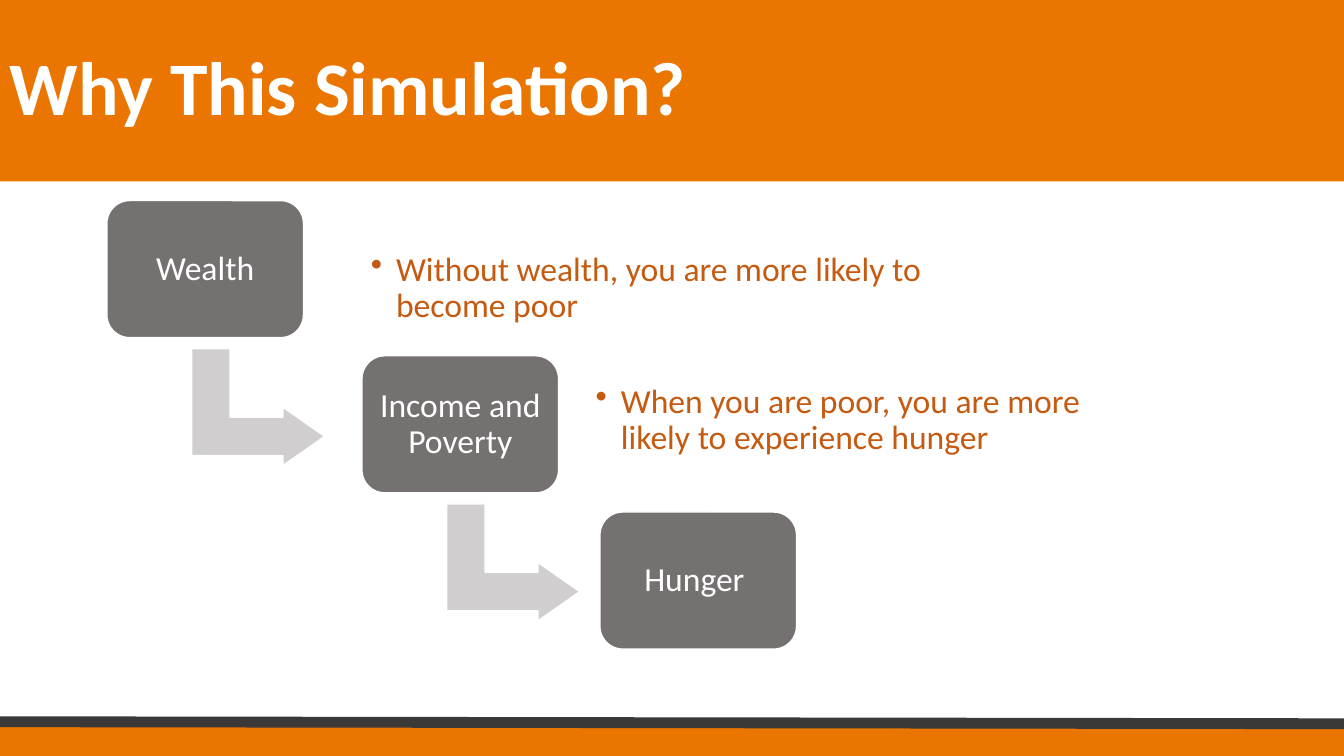
from dataclasses import dataclass

from lxml.etree import SubElement
from pptx import Presentation
from pptx.dml.color import RGBColor as RGB
from pptx.enum.shapes import MSO_CONNECTOR as CONNECTOR, MSO_SHAPE as SHAPE
from pptx.enum.text import MSO_ANCHOR as ANCHOR, PP_ALIGN as ALIGN
from pptx.oxml.ns import qn
from pptx.util import Inches, Pt


@dataclass(frozen=True)
class Theme:
    font: str = "Calibri"
    orange: str = "EA7500"
    charcoal: str = "3B3838"
    gray: str = "767171"
    light_gray: str = "D0CECE"
    rust: str = "C55A11"
    white: str = "FFFFFF"
    title_size: int = 54
    body_size: int = 24
    outline: float = 1
    rule: float = 7.75


THEME = Theme()
SLIDE_W, SLIDE_H = 13.33, 7.5

# Each step: left and top within the flow, label, detail (left, top, width within the step, text)
STEPS = [
    (0, 0, "Wealth",
     (2.52, 0.32, 5.91, "Without wealth, you are more likely to become poor")),
    (2.53, 1.54, "Income and Poverty",
     (2.22, 0.09, 5.05, "When you are poor, you are more likely to experience hunger")),
    (4.89, 3.09, "Hunger ", None),
]


def write(shape, text, size=THEME.body_size, color=THEME.white, bold=False,
          align=ALIGN.LEFT, inset=0.1, inset_y=0.1, bullet=False):
    """Set a shape's text, vertically centred."""
    frame = shape.text_frame
    frame.word_wrap = True
    frame.vertical_anchor = ANCHOR.MIDDLE
    frame.margin_left = frame.margin_right = Inches(inset)
    frame.margin_top = frame.margin_bottom = Inches(inset_y)
    line = frame.paragraphs[0]
    if bullet:
        props = line._p.get_or_add_pPr()
        props.set("marL", str(Inches(0.25)))
        props.set("indent", str(Inches(-0.25)))
        SubElement(props, qn("a:buChar"), char="•")
    line.alignment = align
    line.line_spacing = 0.9
    run = line.add_run()
    run.text = text
    run.font.name = THEME.font
    run.font.size = Pt(size)
    run.font.bold = bold
    run.font.color.rgb = RGB.from_string(color)


def add_block(slide, kind, left, top, width, height, fill, outlined=False, adjust=()):
    block = slide.shapes.add_shape(
        kind, Inches(left), Inches(top), Inches(width), Inches(height))
    block.shadow.inherit = False
    block.fill.solid()
    block.fill.fore_color.rgb = RGB.from_string(fill)
    if outlined:
        block.line.color.rgb = RGB.from_string(THEME.white)
        block.line.width = Pt(THEME.outline)
    else:
        block.line.fill.background()
    for index, value in enumerate(adjust):
        block.adjustments[index] = value
    return block


def add_footer(slide, left, top, width, height):
    add_block(slide, SHAPE.RECTANGLE, left, top, width, height, THEME.orange)
    rule = slide.shapes.add_connector(
        CONNECTOR.STRAIGHT, Inches(left), Inches(top - 0.02), Inches(left + width), Inches(top))
    rule.line.color.rgb = RGB.from_string(THEME.charcoal)
    rule.line.width = Pt(THEME.rule)
    SubElement(rule._element.spPr, qn("a:effectLst"))


def add_title(slide, left, top, width, height, text):
    banner = add_block(slide, SHAPE.RECTANGLE, left, top, width, height, THEME.orange)
    write(banner, text, size=THEME.title_size, bold=True, inset_y=0.05)


def add_flow(slide, left, top, box_w, box_h):
    for step_left, step_top, label, detail in STEPS:
        x, y = left + step_left, top + step_top
        # Arrow down to the next step
        if detail:
            arrow = add_block(slide, SHAPE.BENT_UP_ARROW, x + 0.92, y + 1.39, 1.16, 1.32,
                              THEME.light_gray, outlined=True, adjust=(0.328, 0.25, 0.358))
            arrow.rotation = 90
        # Step box
        step = add_block(slide, SHAPE.ROUNDED_RECTANGLE, x, y, box_w, box_h,
                         THEME.gray, outlined=True, adjust=(0.167,))
        write(step, label, align=ALIGN.CENTER)
        # Explanation beside the step
        if detail:
            dx, dy, width, text = detail
            note = slide.shapes.add_textbox(
                Inches(x + dx), Inches(y + dy), Inches(width), Inches(1.1))
            write(note, text, color=THEME.rust, bullet=True)


def main():
    deck = Presentation()
    deck.slide_width, deck.slide_height = Inches(SLIDE_W), Inches(SLIDE_H)
    slide = deck.slides.add_slide(deck.slide_layouts[6])
    add_footer(slide, 0, 7.18, SLIDE_W, 0.32)
    add_title(slide, 0, 0, SLIDE_W, 1.8, "Why This Simulation?")
    add_flow(slide, 1.06, 1.99, 1.95, 1.36)
    deck.save("out.pptx")


if __name__ == "__main__":
    main()
